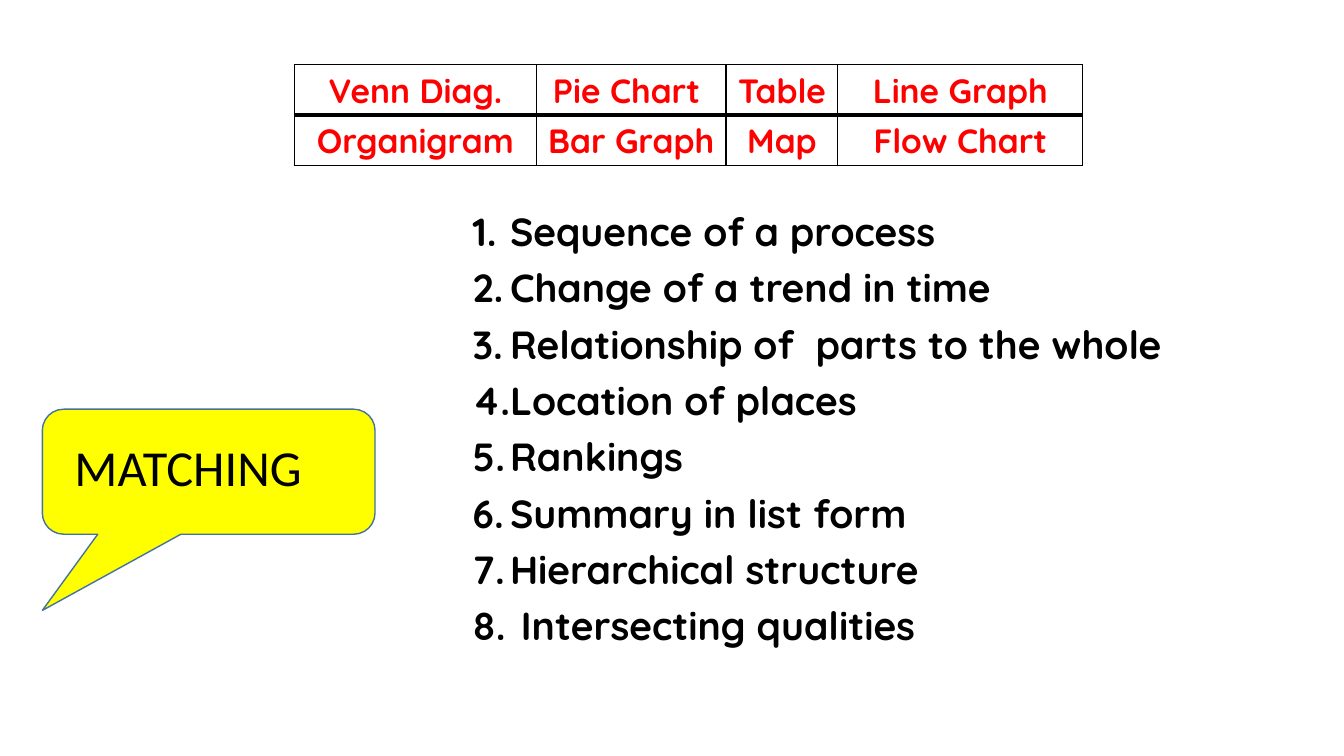
from lxml.etree import SubElement
from pptx import Presentation
from pptx.dml.color import RGBColor
from pptx.enum.shapes import MSO_SHAPE as Shape
from pptx.enum.text import MSO_AUTO_SIZE as AutoSize, PP_ALIGN as Align
from pptx.oxml import parse_xml
from pptx.oxml.ns import nsdecls, qn
from pptx.util import Inches, Pt

BLACK = RGBColor(0x00, 0x00, 0x00)
RED = RGBColor(0xFF, 0x00, 0x00)
YELLOW = RGBColor(0xFF, 0xFF, 0x00)
BLUE = RGBColor(0x43, 0x73, 0x9E)

CHART_TYPES = [
    ["Venn Diag.", "Pie Chart ", "Table ", "Line Graph"],
    ["Organigram", "Bar Graph", "Map", "Flow Chart"],
]
COLUMN_WIDTHS = [2.4, 1.88, 1.11, 2.43]
PURPOSES = [
    "Sequence of a process",
    "Change of a trend in time",
    "Relationship of  parts to the whole",
    "Location of places",
    "Rankings",
    "Summary in list form",
    "Hierarchical structure",
    " Intersecting qualities",
]


def style_text(para, name, size, color, bold=False):
    for span in para.runs:
        span.font.name = name
        span.font.size = Pt(size)
        span.font.bold = bold
        span.font.color.rgb = color


def set_borders(cell, widths):
    """Draw black borders; widths are points for left, right, top, bottom."""
    properties = cell._tc.get_or_add_tcPr()
    for index, (side, width) in enumerate(zip("LRTB", widths)):
        properties.insert(index, parse_xml(
            f'<a:ln{side} {nsdecls("a")} w="{Pt(width)}"><a:solidFill>'
            f'<a:srgbClr val="{BLACK}"/></a:solidFill></a:ln{side}>'))


deck = Presentation()
deck.slide_width = Inches(13.33)
deck.slide_height = Inches(7.5)
page = deck.slides.add_slide(deck.slide_layouts[6])

# Numbered purposes
list_box = page.shapes.add_textbox(Inches(4.4), Inches(2.06), Inches(8.18), Inches(5.44))
list_frame = list_box.text_frame
list_frame.word_wrap = True
list_frame.text = "\n".join(PURPOSES)
for para in list_frame.paragraphs:
    para.line_spacing = 0.9
    para.space_before = Pt(10)
    style_text(para, "Quicksand", 28, BLACK, bold=True)
    properties = para._p.get_or_add_pPr()
    properties.set("marL", str(Inches(0.56)))
    properties.set("indent", str(Inches(-0.37)))
    SubElement(properties, qn("a:buFont"), typeface="+mj-lt")
    SubElement(properties, qn("a:buAutoNum"), type="arabicPeriod")

# Chart types to match
table = page.shapes.add_table(
    2, 4, Inches(2.92), Inches(0.64), Inches(7.83), Inches(1)).table
table.first_row = False
table.horz_banding = False
for column, width in zip(table.columns, COLUMN_WIDTHS):
    column.width = Inches(width)
for row, names in enumerate(CHART_TYPES):
    for col, name in enumerate(names):
        cell = table.cell(row, col)
        cell.text = name
        cell.fill.background()
        set_borders(cell, [1, 1, 1, 3] if row == 0 else [1, 1, 3, 1])
        para = cell.text_frame.paragraphs[0]
        para.alignment = Align.CENTER
        style_text(para, "Quicksand", 24, RED, bold=True)

# Callout with its title
callout = page.shapes.add_shape(
    Shape.ROUNDED_RECTANGULAR_CALLOUT, Inches(0.42), Inches(4.06), Inches(3.3), Inches(1.24))
for index, value in enumerate([-0.5, 1.11, 0.17]):
    callout.adjustments[index] = value
callout.shadow.inherit = False
callout.fill.solid()
callout.fill.fore_color.rgb = YELLOW
callout.line.color.rgb = BLUE
callout.line.width = Pt(1)

title_box = page.shapes.add_textbox(Inches(0.64), Inches(4.28), Inches(2.98), Inches(0.71))
title_frame = title_box.text_frame
title_frame.word_wrap = True
title_frame.auto_size = AutoSize.SHAPE_TO_FIT_TEXT
title_frame.text = "MATCHING"
style_text(title_frame.paragraphs[0], "Calibri", 36, BLACK)

deck.save("out.pptx")
